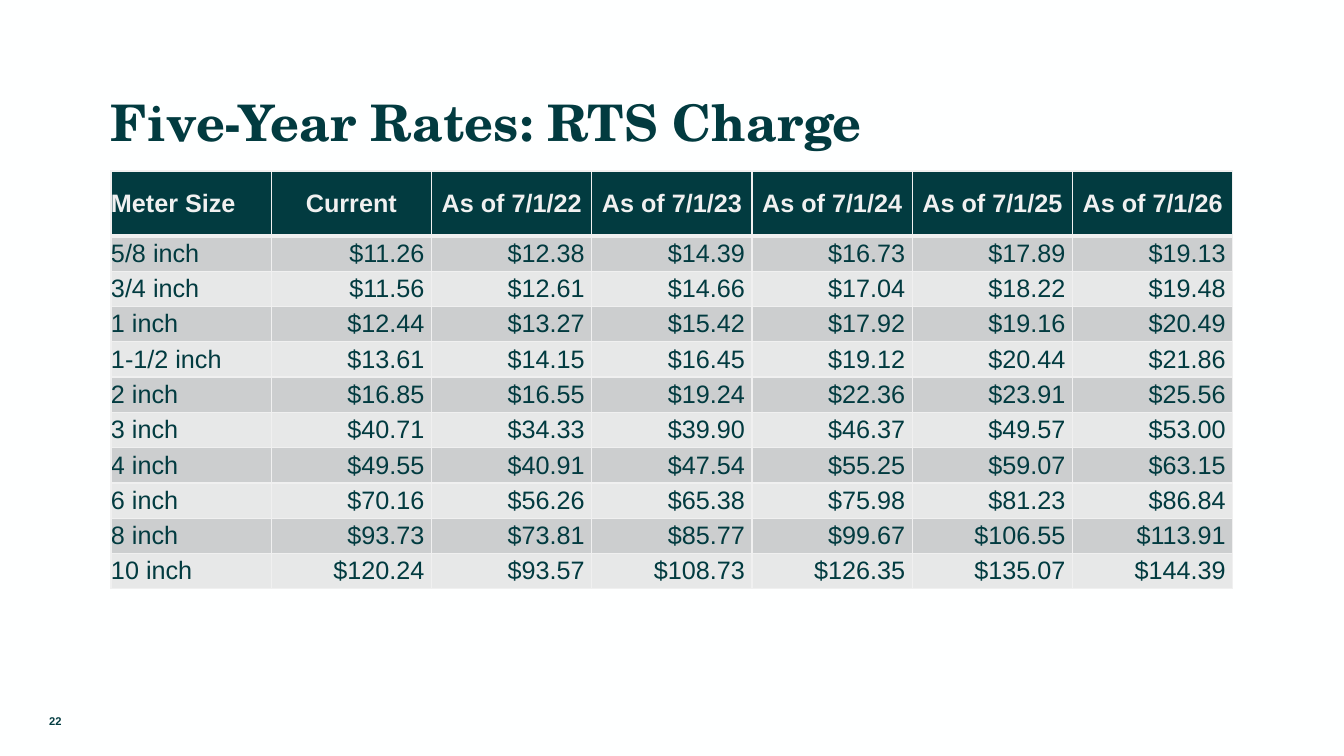
import lxml.etree
import pptx
import pptx.dml.color
import pptx.enum.text
import pptx.oxml.ns
import pptx.util

EMU_PER_PX = 914400 / 100.8
ALIGN = pptx.enum.text.PP_ALIGN
ANCHOR = pptx.enum.text.MSO_ANCHOR

# Colours
PAPER = "FEFFFF"
TEAL = "023B40"
PALE = "F0F0F0"
BANDS = ["CCCECF", "E7E8E8"]

# Table content
HEADINGS = ["Meter Size", "Current"] + [f"As of 7/1/{year}" for year in range(22, 27)]
RATES = [
    ("5/8 inch", 11.26, 12.38, 14.39, 16.73, 17.89, 19.13),
    ("3/4 inch", 11.56, 12.61, 14.66, 17.04, 18.22, 19.48),
    ("1 inch", 12.44, 13.27, 15.42, 17.92, 19.16, 20.49),
    ("1-1/2 inch", 13.61, 14.15, 16.45, 19.12, 20.44, 21.86),
    ("2 inch", 16.85, 16.55, 19.24, 22.36, 23.91, 25.56),
    ("3 inch", 40.71, 34.33, 39.90, 46.37, 49.57, 53.00),
    ("4 inch", 49.55, 40.91, 47.54, 55.25, 59.07, 63.15),
    ("6 inch", 70.16, 56.26, 65.38, 75.98, 81.23, 86.84),
    ("8 inch", 93.73, 73.81, 85.77, 99.67, 106.55, 113.91),
    ("10 inch", 120.24, 93.57, 108.73, 126.35, 135.07, 144.39),
]


def px(length):
    return pptx.util.Emu(round(length * EMU_PER_PX))


def color(hex_code):
    return pptx.dml.color.RGBColor.from_string(hex_code)


def write(frame, words, size, ink, bold=False, font="Arial", align=ALIGN.LEFT):
    line = frame.paragraphs[0]
    line.alignment = align
    run = line.add_run()
    run.text = words
    run.font.name = font
    run.font.size = pptx.util.Pt(size)
    run.font.bold = bold
    run.font.color.rgb = color(ink)


def add_title(slide, words):
    title = slide.shapes.title
    title.left, title.top, title.width, title.height = px(111), px(64), px(1122), px(88)
    frame = title.text_frame
    frame.margin_left = frame.margin_right = frame.margin_bottom = 0
    frame.margin_top = px(21)
    frame.vertical_anchor = ANCHOR.BOTTOM
    write(frame, words, 36, TEAL, bold=True, font="TeX Gyre Schola")


def set_borders(cell, top, bottom):
    properties = cell._tc.get_or_add_tcPr()
    for side, points in (("L", 1), ("R", 1), ("T", top), ("B", bottom)):
        border = lxml.etree.SubElement(
            properties, pptx.oxml.ns.qn(f"a:ln{side}"), w=str(pptx.util.Pt(points)))
        paint = lxml.etree.SubElement(border, pptx.oxml.ns.qn("a:solidFill"))
        lxml.etree.SubElement(paint, pptx.oxml.ns.qn("a:srgbClr"), val=PALE)


def fill_cell(cell, words, background, ink, bold, align, top=1, bottom=1):
    set_borders(cell, top, bottom)
    cell.fill.solid()
    cell.fill.fore_color.rgb = color(background)
    cell.margin_left = cell.margin_right = cell.margin_top = cell.margin_bottom = 0
    cell.vertical_anchor = ANCHOR.MIDDLE
    write(cell.text_frame, words, 18, ink, bold, align=align)


def add_rates(slide, left, top, width, height, header_height):
    rates = slide.shapes.add_table(
        len(RATES) + 1, len(HEADINGS), px(left), px(top), px(width), px(height)).table
    for column in rates.columns:
        column.width = px(width / len(HEADINGS))
    for row in rates.rows:
        row.height = px((height - header_height) / len(RATES))
    rates.rows[0].height = px(header_height)

    # Header row
    for col, heading in enumerate(HEADINGS):
        align = ALIGN.CENTER if col else ALIGN.LEFT
        fill_cell(rates.cell(0, col), heading, TEAL, PALE, True, align, bottom=3)

    # Banded body rows
    for row, (meter, *charges) in enumerate(RATES, start=1):
        band = BANDS[(row - 1) % 2]
        top_border = 3 if row == 1 else 1
        fill_cell(rates.cell(row, 0), meter, band, TEAL, False, ALIGN.LEFT, top_border)
        for col, charge in enumerate(charges, start=1):
            fill_cell(rates.cell(row, col), f"${charge:.2f} ", band, TEAL, False,
                      ALIGN.RIGHT, top_border)


def add_page_number(slide, number):
    page = slide.shapes.add_textbox(px(0), px(701), px(111), px(40))
    page.text_frame.word_wrap = True
    page.text_frame.vertical_anchor = ANCHOR.MIDDLE
    write(page.text_frame, number, 8, TEAL, bold=True, align=ALIGN.CENTER)


def main():
    deck = pptx.Presentation()
    deck.slide_width, deck.slide_height = px(1344), px(756)
    slide = deck.slides.add_slide(deck.slide_layouts.get_by_name("Title Only"))
    slide.background.fill.solid()
    slide.background.fill.fore_color.rgb = color(PAPER)

    add_title(slide, "Five-Year Rates: RTS Charge")
    add_rates(slide, left=111, top=171, width=1122, height=418, header_height=65)
    add_page_number(slide, "22")
    deck.save("out.pptx")


if __name__ == "__main__":
    main()
